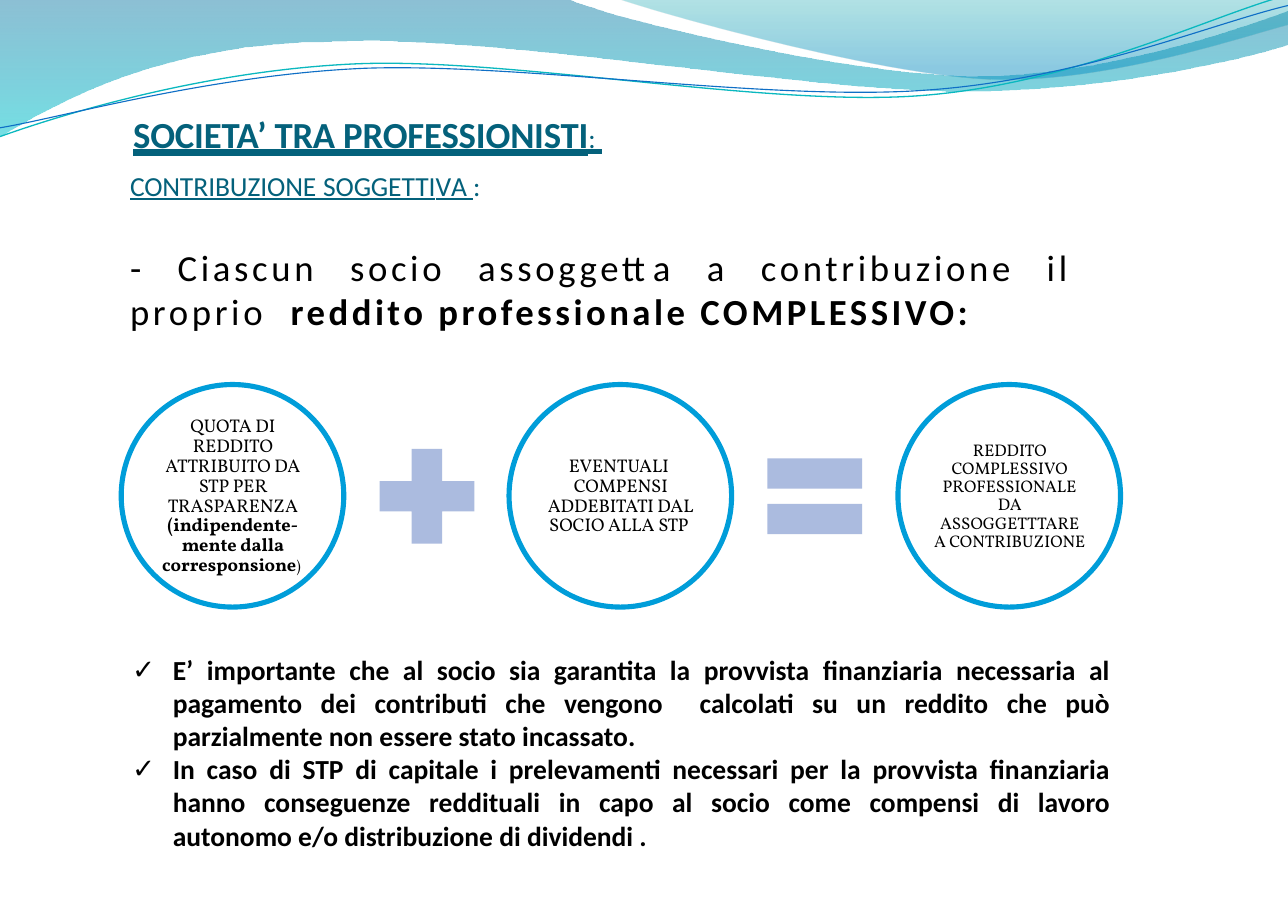
import pptx
import pptx.dml.color
import pptx.enum.shapes
import pptx.enum.text
import pptx.oxml.ns
import pptx.util
from lxml import etree

PX = 9144  # EMU per px, 100 px to the inch
RGBColor = pptx.dml.color.RGBColor
ALIGN = pptx.enum.text.PP_ALIGN
ANCHOR = pptx.enum.text.MSO_ANCHOR
HEAVY_LINE = pptx.enum.text.MSO_UNDERLINE.HEAVY_LINE
SHAPE = pptx.enum.shapes.MSO_SHAPE
qn = pptx.oxml.ns.qn

BLACK = RGBColor(0x00, 0x00, 0x00)
WHITE = RGBColor(0xFF, 0xFF, 0xFF)
PETROL = RGBColor(0x04, 0x61, 0x7B)
RING_BLUE = RGBColor(0x00, 0x9D, 0xD9)
OPERATOR_BLUE = RGBColor(0xAB, 0xBB, 0xDF)
DEEP_BLUE = RGBColor(0x00, 0x74, 0xA1)
CYAN = RGBColor(0x00, 0xC6, 0xCF)
TEAL = RGBColor(0x00, 0xA1, 0xA9)
SKY_BLUE = RGBColor(0x00, 0x8B, 0xBF)
LINE_TEAL = RGBColor(0x0A, 0xB8, 0xBF)
LINE_BLUE = RGBColor(0x0F, 0x6F, 0xC6)

presentation = pptx.Presentation()
presentation.slide_width = 1169 * PX
presentation.slide_height = 826 * PX
slide = presentation.slides.add_slide(presentation.slide_layouts[6])


def add_wave(start, segments, closed):
    """Draw an outline: a segment of one point is straight, of three a Bezier curve."""
    builder = slide.shapes.build_freeform(*start, scale=PX)
    builder.add_line_segments([point for segment in segments for point in segment], close=closed)
    shape = builder.convert_to_shape()
    shape.shadow.inherit = False
    # Merge the three steps of each curve into one Bezier element
    steps = iter(list(shape._element.spPr.iter(qn("a:lnTo"))))
    for segment in segments:
        elements = [next(steps) for _ in segment]
        if len(segment) == 3:
            curve = etree.Element(qn("a:cubicBezTo"))
            elements[0].addprevious(curve)
            for element in elements:
                curve.append(element[0])
                element.getparent().remove(element)
    return shape


def add_text(paragraphs, left, top, width, height, *, size=18, font="Calibri", color=BLACK,
             bold=False, underline=False, spacing=0, align=ALIGN.JUSTIFY, anchor=ANCHOR.TOP,
             margins=(10, 5, 10, 5), line_spacing=None, bullet=None, indent=0):
    """Each paragraph is a list of (text, format changes) runs."""
    box = slide.shapes.add_textbox(left * PX, top * PX, width * PX, height * PX)
    frame = box.text_frame
    frame.word_wrap = True
    frame.vertical_anchor = anchor
    (frame.margin_left, frame.margin_top,
     frame.margin_right, frame.margin_bottom) = [margin * PX for margin in margins]
    for index, runs in enumerate(paragraphs):
        paragraph = frame.add_paragraph() if index else frame.paragraphs[0]
        paragraph.alignment = align
        if line_spacing:
            paragraph.line_spacing = line_spacing
        if bullet:
            properties = paragraph._p.get_or_add_pPr()
            properties.set("marL", str(indent * PX))
            properties.set("indent", str(-indent * PX))
            etree.SubElement(properties, qn("a:buFont")).set("typeface", font)
            etree.SubElement(properties, qn("a:buChar")).set("char", bullet)
        for text, changes in runs:
            run = paragraph.add_run()
            run.text = text
            run.font.name = changes.get("font", font)
            run.font.size = pptx.util.Pt(changes.get("size", size))
            run.font.bold = changes.get("bold", bold)
            run.font.underline = changes.get("underline", underline)
            run.font.color.rgb = color
            run_spacing = changes.get("spacing", spacing)
            run._r.get_or_add_rPr().set("spc", str(round(run_spacing * 100)))


# Filled waves at the top: gradient stops are (position, colour, opacity in percent)
filled_waves = [
    ((0, 0),
     [[(515, -1)], [(556, 18), (776, 69), (887, 69)], [(998, 69), (1121, 28), (1169, 10)],
      [(1171, 40)], [(1150, 48), (1017, 83), (872, 83)], [(727, 83), (446, 31), (301, 38)],
      [(151, 39), (54, 91), (-1, 125)]],
     [(0, DEEP_BLUE, 45), (1, CYAN, 55)]),
    ((560, -1),
     [[(596, 12), (797, 68), (899, 72)], [(1001, 76), (1124, 35), (1169, 23)], [(1169, 0)]],
     [(0, TEAL, 30), (0.8, SKY_BLUE, 45)]),
]
for start, segments, stops in filled_waves:
    wave = add_wave(start, segments, True)
    wave.line.fill.background()
    wave.fill.gradient()
    wave.fill.gradient_angle = 270
    for stop, (position, color, _) in zip(wave.fill.gradient_stops, stops):
        stop.position = position
        stop.color.rgb = color
    gradient_colors = wave._element.spPr.find(qn("a:gradFill")).iter(qn("a:srgbClr"))
    for color_element, (_, _, opacity) in zip(gradient_colors, stops):
        etree.SubElement(color_element, qn("a:alpha")).set("val", str(opacity * 1000))

# Thin wave lines
wave_lines = [
    ((0, 124), [[(56, 104), (185, 64), (323, 58)], [(462, 52), (693, 97), (833, 87)],
                [(974, 77), (1097, 15), (1167, -4)]], LINE_TEAL, 0.85),
    ((0, 116), [[(55, 107), (191, 68), (331, 62)], [(471, 57), (698, 92), (838, 82)],
                [(978, 73), (1101, 21), (1169, 5)]], LINE_BLUE, 0.75),
]
for start, segments, color, width in wave_lines:
    wave = add_wave(start, segments, False)
    wave.fill.background()
    wave.line.color.rgb = color
    wave.line.width = pptx.util.Pt(width)

# Headings
add_text([[("SOCIETA’ TRA PROFESSIONISTI", {"bold": True}), (": ", {"size": 18})]],
         111, 97, 757, 50, size=24, color=PETROL, underline=HEAVY_LINE, spacing=-0.1)
add_text([[("CONT", {}), ("R", {"spacing": 0}), ("IBU", {}), ("Z", {"spacing": 0}),
           ("IONE", {}), (" ", {"font": "Times New Roman", "spacing": -0.8}),
           ("SOGGE", {}), ("T", {"spacing": 0.2}), ("TI", {}), ("V", {"spacing": -1.4}),
           ("A ", {}), (":", {"underline": False})]],
         118, 146, 795, 37, color=PETROL, underline=True, spacing=-0.1,
         align=ALIGN.LEFT, anchor=ANCHOR.BOTTOM, margins=(0, 6, 0, 0))

# Introduction
add_text([[("- Ciascun socio assoggetta a contribuzione il proprio  ", {}),
           ("reddito professionale COMPLESSIVO:", {"bold": True, "spacing": 2.3})]],
         118, 222, 855, 82, size=24, spacing=2.4, margins=(0, 0, 0, 0))

# Equation: circles with an operator after each of the first two
circles = [
    ([("QUOTA DI REDDITO ATTRIBUITO DA STP PER TRASPARENZA ", {}),
      ("(indipendente-mente dalla corresponsione", {"bold": True}), (") ", {"size": 10})],
     12, SHAPE.MATH_PLUS),
    ([("EVENTUALI  COMPENSI ADDEBITATI DAL SOCIO ALLA STP ", {})], 12, SHAPE.MATH_EQUAL),
    ([("REDDITO COMPLESSIVO PROFESSIONALE DA ASSOGGETTTARE A CONTRIBUZIONE ", {})], 11, None),
]
for index, (runs, size, operator) in enumerate(circles):
    left = 110 + index * 705 // 2
    circle = slide.shapes.add_shape(SHAPE.OVAL, left * PX, 349 * PX, 202 * PX, 202 * PX)
    circle.shadow.inherit = False
    circle.fill.solid()
    circle.fill.fore_color.rgb = WHITE
    circle.line.color.rgb = RING_BLUE
    circle.line.width = pptx.util.Pt(3.35)
    add_text([runs], left + 30, 379, 143, 143, size=size, font="Vollkorn", align=ALIGN.CENTER,
             anchor=ANCHOR.MIDDLE, margins=(2, 2, 2, 2), line_spacing=0.9)
    if operator:
        sign = slide.shapes.add_shape(operator, (left + 219) * PX, 392 * PX, 117 * PX, 117 * PX)
        sign.shadow.inherit = False
        sign.fill.solid()
        sign.fill.fore_color.rgb = OPERATOR_BLUE
        sign.line.fill.background()

# Closing remarks
add_text([[("E’ importante che al socio sia garantita la provvista finanziaria necessaria al "
            "pagamento dei contributi che vengono  calcolati su un reddito che può "
            "parzialmente non essere stato incassato.", {})],
          [("In caso di STP di capitale i prelevamenti necessari per la provvista finanziaria "
            "hanno conseguenze reddituali in capo al socio come compensi di lavoro autonomo "
            "e/o distribuzione di dividendi .", {})]],
         110, 588, 908, 192, bold=True, bullet="✓", indent=37)

presentation.save("out.pptx")
